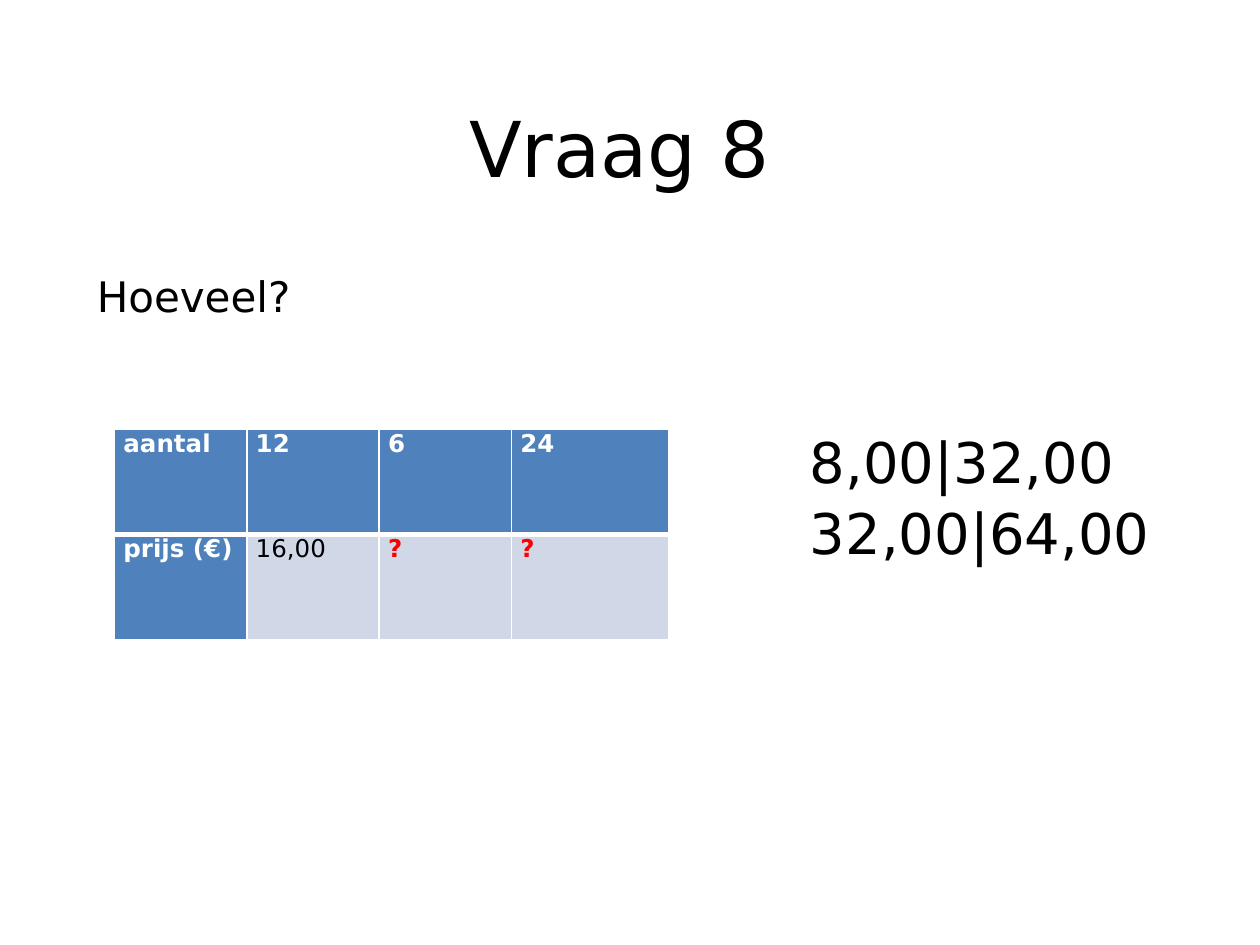
from lxml.etree import SubElement
from pptx import Presentation
from pptx.dml.color import RGBColor
from pptx.enum.shapes import MSO_SHAPE
from pptx.enum.text import MSO_ANCHOR, PP_ALIGN
from pptx.oxml.ns import qn
from pptx.util import Inches, Pt

FONT = "DejaVu Sans"
BLACK, WHITE, RED = "000000", "FFFFFF", "FF0000"
BLUE, PALE = "4F81BD", "D0D8E8"


def rgb(value):
    return RGBColor.from_string(value)


def write(tf, *lines, size, color=BLACK, bold=False, align=PP_ALIGN.LEFT,
          anchor=MSO_ANCHOR.TOP, spacing=None, before=0):
    tf.word_wrap = True
    tf.vertical_anchor = anchor
    for i, line in enumerate(lines):
        p = tf.add_paragraph() if i else tf.paragraphs[0]
        p.alignment = align
        if spacing:
            p.line_spacing = spacing
        if i:
            p.space_before = Pt(before)
        r = p.add_run()
        r.text = line
        r.font.name, r.font.size, r.font.bold = FONT, Pt(size), bold
        r.font.color.rgb = rgb(color)


def add_text(s, box, text, **fmt):
    sp = s.shapes.add_textbox(*map(Inches, box))
    write(sp.text_frame, text, **fmt)


def add_choices(s, box, choices):
    sp = s.shapes.add_shape(MSO_SHAPE.RECTANGLE, *map(Inches, box))
    sp.shadow.inherit = False
    sp.fill.solid()
    sp.fill.fore_color.rgb = rgb(WHITE)
    sp.line.fill.background()
    write(sp.text_frame, *choices, size=32, anchor=MSO_ANCHOR.MIDDLE,
          spacing=0.9, before=6.4)
    for p in sp.text_frame.paragraphs:
        pPr = p._p.get_or_add_pPr()
        pPr.set("marL", str(Inches(0.21)))
        pPr.set("indent", str(Inches(0.18)))


def set_borders(cell, bottom):
    """Draw white cell edges; bottom is the lower edge's width in points."""
    tcPr = cell._tc.get_or_add_tcPr()
    for edge, width in (("L", 1), ("R", 1), ("T", 1), ("B", bottom)):
        ln = SubElement(tcPr, qn(f"a:ln{edge}"), w=str(Pt(width)))
        fill = SubElement(ln, qn("a:solidFill"))
        SubElement(fill, qn("a:srgbClr"), val=WHITE)


def add_price_table(s, box, rows, widths):
    table = s.shapes.add_table(len(rows), len(widths), *map(Inches, box)).table
    for col, width in zip(table.columns, widths):
        col.width = Inches(width)
    for i, row in enumerate(rows):
        table.rows[i].height = Inches(box[3] / len(rows))
        for j, text in enumerate(row):
            cell = table.cell(i, j)
            heading = i == 0 or j == 0
            color = WHITE if heading else RED if text == "?" else BLACK
            cell.margin_left = cell.margin_right = Inches(0.07)
            cell.margin_top = cell.margin_bottom = 0
            write(cell.text_frame, text, size=14, color=color,
                  bold=color != BLACK)
            set_borders(cell, bottom=1 if i else 3)
            cell.fill.solid()
            cell.fill.fore_color.rgb = rgb(BLUE if heading else PALE)


def main():
    prs = Presentation()
    prs.slide_width, prs.slide_height = Inches(10), Inches(7.5)
    s = prs.slides.add_slide(prs.slide_layouts[6])
    add_text(s, (0.67, 0.36, 8.5, 1.61), "Vraag 8", size=44,
             align=PP_ALIGN.CENTER, anchor=MSO_ANCHOR.MIDDLE)
    add_choices(s, (5.94, 1.78, 3.46, 4.39), ["8,00|32,00", "32,00|64,00"])
    add_text(s, (0.67, 2.1, 4.88, 1.31), "Hoeveel?", size=24)
    add_price_table(s, (0.91, 3.41, 4.41, 1.67),
                    [["aantal", "12", "6", "24"],
                     ["prijs (€)", "16,00", "?", "?"]],
                    [1.05, 1.05, 1.05, 1.25])
    prs.save("out.pptx")


if __name__ == "__main__":
    main()
